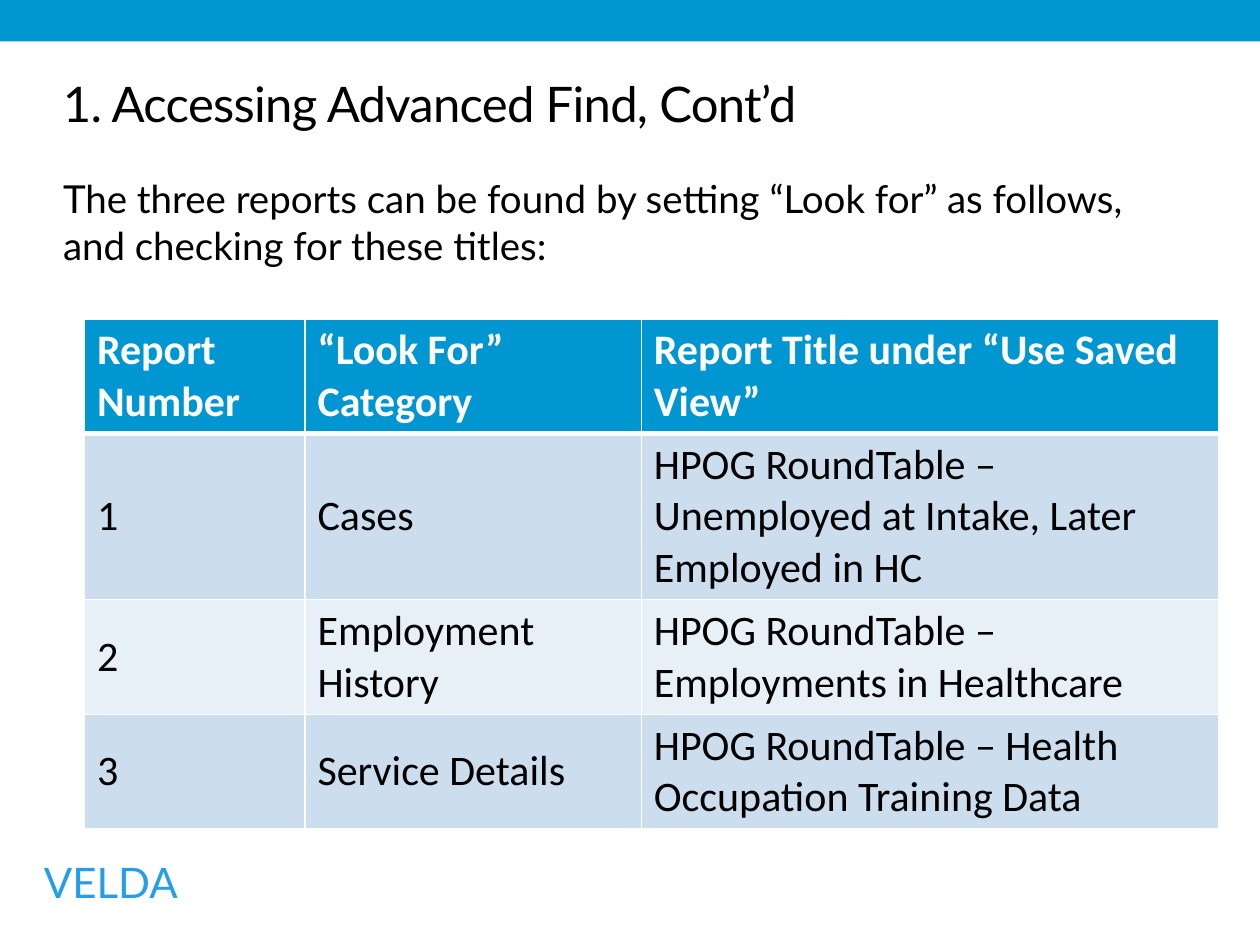
from dataclasses import dataclass

from lxml import etree
from pptx import Presentation
from pptx.dml.color import RGBColor
from pptx.enum.shapes import MSO_SHAPE
from pptx.enum.text import MSO_ANCHOR
from pptx.oxml.ns import qn
from pptx.slide import Slide
from pptx.table import _Cell
from pptx.text.text import _Paragraph
from pptx.util import Inches, Pt

RECTANGLE = MSO_SHAPE.RECTANGLE
MIDDLE = MSO_ANCHOR.MIDDLE
BLANK_LAYOUT = 6


@dataclass(frozen=True)
class Theme:
    band: str = "0096D2"
    footer: str = "249EE9"
    white: str = "FFFFFF"
    black: str = "000000"
    odd_row: str = "CCDDEE"
    even_row: str = "E7EFF7"
    text_font: str = "Lato"
    table_font: str = "Calibri"
    title_size: float = 28
    body_size: float = 22
    label_size: float = 24
    thin_border: float = 1
    header_border: float = 3


@dataclass(frozen=True)
class TextBlock:
    text: str
    left: float
    top: float
    width: float
    height: float
    size: float
    color: str
    side_inset: float = 0
    top_inset: float = 0
    line_points: float | None = None
    tracking: float = 0


THEME = Theme()

TEXT_BLOCKS = (
    TextBlock("VELDA", 0.25, 6.75, 3.75, 0.51, THEME.label_size, THEME.footer,
              side_inset=0.1, top_inset=0.05),
    TextBlock("1. Accessing Advanced Find, Cont’d", 0.5, 0.58, 9, 0.62,
              THEME.title_size, THEME.black, tracking=-0.4),
    TextBlock("The three reports can be found by setting “Look for” as follows, "
              "and checking for these titles:", 0.5, 1.33, 8.65, 4.67,
              THEME.body_size, THEME.black, top_inset=0.05, line_points=27),
)

COLUMN_WIDTHS = (1.75, 2.67, 4.58)
ROW_HEIGHTS = (0.91, 1.32, 0.91, 0.91)
REPORT_ROWS = (
    ("Report Number", "“Look For” Category", "Report Title under “Use Saved View”"),
    ("1", "Cases", "HPOG RoundTable – Unemployed at Intake, Later Employed in HC"),
    ("2", "Employment History", "HPOG RoundTable – Employments in Healthcare"),
    ("3", "Service Details", "HPOG RoundTable – Health Occupation Training Data"),
)


def add_run(paragraph: _Paragraph, text: str, font_name: str, size: float,
            color: str, bold: bool = False, tracking: float = 0) -> None:
    run = paragraph.add_run()
    run.text = text
    run.font.name = font_name
    run.font.size = Pt(size)
    run.font.bold = bold
    run.font.color.rgb = RGBColor.from_string(color)
    if tracking:
        run.font._element.set("spc", str(round(tracking * 100)))


def add_top_band(slide: Slide) -> None:
    band = slide.shapes.add_shape(RECTANGLE, 0, 0, Inches(10), Inches(0.33))
    band.shadow.inherit = False
    band.fill.solid()
    band.fill.fore_color.rgb = RGBColor.from_string(THEME.band)
    band.line.fill.background()


def add_text_block(slide: Slide, block: TextBlock) -> None:
    shape = slide.shapes.add_textbox(Inches(block.left), Inches(block.top),
                                     Inches(block.width), Inches(block.height))
    frame = shape.text_frame
    frame.word_wrap = True
    frame.margin_left = frame.margin_right = Inches(block.side_inset)
    frame.margin_top = frame.margin_bottom = Inches(block.top_inset)
    paragraph = frame.paragraphs[0]
    if block.line_points:
        paragraph.line_spacing = Pt(block.line_points)
    add_run(paragraph, block.text, THEME.text_font, block.size, block.color,
            tracking=block.tracking)


def set_borders(cell: _Cell, top: float, bottom: float) -> None:
    """Draw white cell borders; they must precede the fill in the XML."""
    properties = cell._tc.get_or_add_tcPr()
    widths = {"a:lnL": THEME.thin_border, "a:lnR": THEME.thin_border,
              "a:lnT": top, "a:lnB": bottom}
    for position, (tag, width) in enumerate(widths.items()):
        line = etree.Element(qn(tag), w=str(Pt(width)))
        fill = etree.SubElement(line, qn("a:solidFill"))
        etree.SubElement(fill, qn("a:srgbClr"), val=THEME.white)
        properties.insert(position, line)


def fill_cell(cell: _Cell, text: str, row_index: int) -> None:
    is_header = row_index == 0
    row_fill = THEME.odd_row if row_index % 2 else THEME.even_row
    cell.vertical_anchor = MIDDLE
    cell.fill.solid()
    cell.fill.fore_color.rgb = RGBColor.from_string(
        THEME.band if is_header else row_fill)
    add_run(cell.text_frame.paragraphs[0], text, THEME.table_font,
            THEME.label_size, THEME.white if is_header else THEME.black, is_header)
    set_borders(cell,
                top=THEME.header_border if row_index == 1 else THEME.thin_border,
                bottom=THEME.header_border if is_header else THEME.thin_border)


def add_report_table(slide: Slide) -> None:
    table = slide.shapes.add_table(
        len(REPORT_ROWS), len(COLUMN_WIDTHS), Inches(0.67), Inches(2.53),
        Inches(sum(COLUMN_WIDTHS)), Inches(sum(ROW_HEIGHTS))).table
    for column, width in zip(table.columns, COLUMN_WIDTHS):
        column.width = Inches(width)
    for row_index, (texts, height) in enumerate(zip(REPORT_ROWS, ROW_HEIGHTS)):
        table.rows[row_index].height = Inches(height)
        for column_index, text in enumerate(texts):
            fill_cell(table.cell(row_index, column_index), text, row_index)


def main() -> None:
    presentation = Presentation()
    presentation.slide_width = Inches(10)
    presentation.slide_height = Inches(7.5)
    slide = presentation.slides.add_slide(presentation.slide_layouts[BLANK_LAYOUT])
    add_top_band(slide)
    for block in TEXT_BLOCKS:
        add_text_block(slide, block)
    add_report_table(slide)
    presentation.save("out.pptx")


if __name__ == "__main__":
    main()
